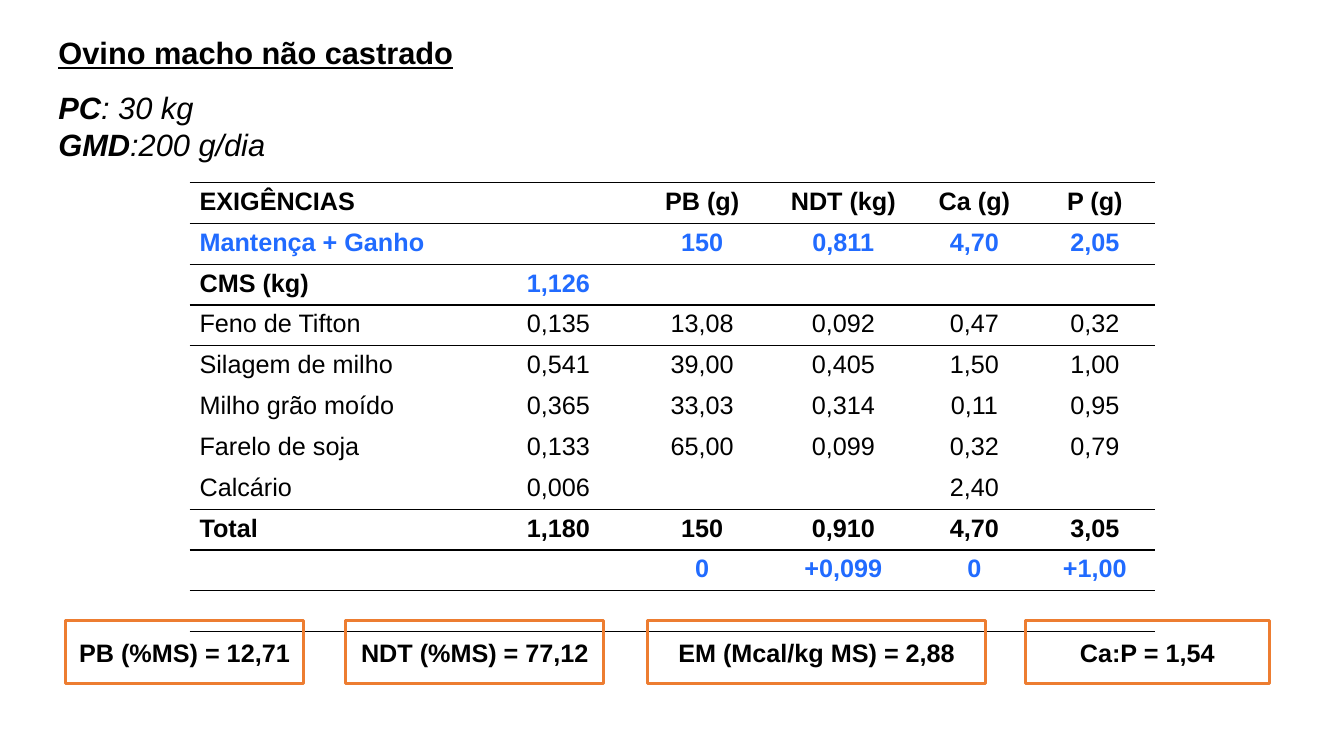
from lxml import etree
from pptx import Presentation
from pptx import util as u
from pptx.dml.color import RGBColor
from pptx.enum import shapes, text
from pptx.oxml.ns import qn

WIDE, HIGH = u.Inches(13.33), u.Inches(7.5)
BLACK, BLUE, ORANGE = "000000", "216BFF", "ED7D31"
COLS = [21.98, 10.95, 10.43, 10.58, 8.93, 9]
ROWS = 13
RULES = {0, 1, 2, 3, 8, 10}
BOLD = {0, 1, 2, 8, 9}
BLUES = {(2, 1)} | {(row, col) for row in (1, 9) for col in range(6)}
DIET = [
    ["EXIGÊNCIAS", "", "PB (g)", "NDT (kg)", "Ca (g)", "P (g)"],
    ["Mantença + Ganho", "", "150", "0,811", "4,70", "2,05"],
    ["CMS (kg)", "1,126", "", "", "", ""],
    ["Feno de Tifton", "0,135", "13,08", "0,092", "0,47", "0,32"],
    ["Silagem de milho", "0,541", "39,00", "0,405", "1,50", "1,00"],
    ["Milho grão moído", "0,365", "33,03", "0,314", "0,11", "0,95"],
    ["Farelo de soja", "0,133", "65,00", "0,099", "0,32", "0,79"],
    ["Calcário", "0,006", "", "", "2,40", ""],
    ["Total", "1,180", "150", "0,910", "4,70", "3,05"],
    ["", "", "0", "+0,099", "0", "+1,00"],
]
BOXES = [
    (4.88, 17.7, "PB (%MS) = 12,71"),
    (25.73, 19.2, "NDT (%MS) = 77,12"),
    (48.16, 25.2, "EM (Mcal/kg MS) = 2,88"),
    (76.29, 18.15, "Ca:P = 1,54"),
]


def wide(share):
    return round(WIDE * share / 100)


def high(share):
    return round(HIGH * share / 100)


def area(x, y, w, h):
    return wide(x), high(y), wide(w), high(h)


def color(code):
    return RGBColor.from_string(code)


def style(para, size, code=BLACK, bold=None, align=text.PP_ALIGN.CENTER):
    para.alignment = align
    font = para.font
    font.name, font.size, font.bold = "Arial", u.Pt(size), bold
    font.color.rgb = color(code)


def add_title(slide):
    title = slide.shapes.title
    title.left, title.top, title.width, title.height = area(3.6, 1.33, 50, 21.07)
    frame = title.text_frame
    frame.word_wrap = True
    frame.auto_size = text.MSO_AUTO_SIZE.SHAPE_TO_FIT_TEXT
    frame.vertical_anchor = text.MSO_ANCHOR.TOP
    frame.text = "Ovino macho não castrado"
    head = frame.paragraphs[0]
    style(head, 22, bold=True, align=text.PP_ALIGN.LEFT)
    head.font.underline = True
    head.line_spacing = 1.5
    for label, value, space in [("PC", ": 30 kg", 1.5), ("GMD", ":200 g/dia", 1)]:
        para = frame.add_paragraph()
        style(para, 22, align=text.PP_ALIGN.LEFT)
        para.font.italic = True
        para.line_spacing = space
        for part, bold in ((label, True), (value, False)):
            run = para.add_run()
            run.text, run.font.bold = part, bold


def add_rule(cell, side):
    line = etree.Element(qn(f"a:ln{side}"), w=str(u.Pt(1)))
    fill = etree.SubElement(line, qn("a:solidFill"))
    etree.SubElement(fill, qn("a:srgbClr"), val=BLACK)
    cell._tc.get_or_add_tcPr().insert(0, line)


def add_diet(slide):
    place = area(14.1, 24.13, sum(COLS), 70.27)
    frame = slide.shapes.add_table(ROWS, len(COLS), *place)
    table = frame.table
    table.first_row = table.horz_banding = False
    table._tbl.tblPr.find(qn("a:tableStyleId")).text = (
        "{2D5ABB26-0587-4C30-8999-92F81FD0307C}")
    for col, share in zip(table.columns, COLS):
        col.width = wide(share)
    for row in range(ROWS):
        for col in range(len(COLS)):
            cell = table.cell(row, col)
            cell.fill.background()
            for side, edge in (("B", row + 1), ("T", row)):
                if edge in RULES:
                    add_rule(cell, side)
            if row < len(DIET) and DIET[row][col]:
                cell.text = DIET[row][col]
                code = BLUE if (row, col) in BLUES else BLACK
                align = text.PP_ALIGN.CENTER if col else text.PP_ALIGN.LEFT
                style(cell.text_frame.paragraphs[0], 18, code, row in BOLD, align)


def add_box(slide, left, width, label):
    box = slide.shapes.add_shape(
        shapes.MSO_SHAPE.RECTANGLE, *area(left, 82.13, width, 8.27))
    box.shadow.inherit = False
    box.fill.background()
    box.line.color.rgb = color(ORANGE)
    box.line.width = u.Pt(2.25)
    frame = box.text_frame
    frame.word_wrap = True
    frame.vertical_anchor = text.MSO_ANCHOR.MIDDLE
    frame.text = label
    style(frame.paragraphs[0], 18, bold=True)


def main():
    deck = Presentation()
    deck.slide_width, deck.slide_height = WIDE, HIGH
    slide = deck.slides.add_slide(deck.slide_layouts[5])
    add_diet(slide)
    add_title(slide)
    for box in BOXES:
        add_box(slide, *box)
    deck.save("out.pptx")


if __name__ == "__main__":
    main()
